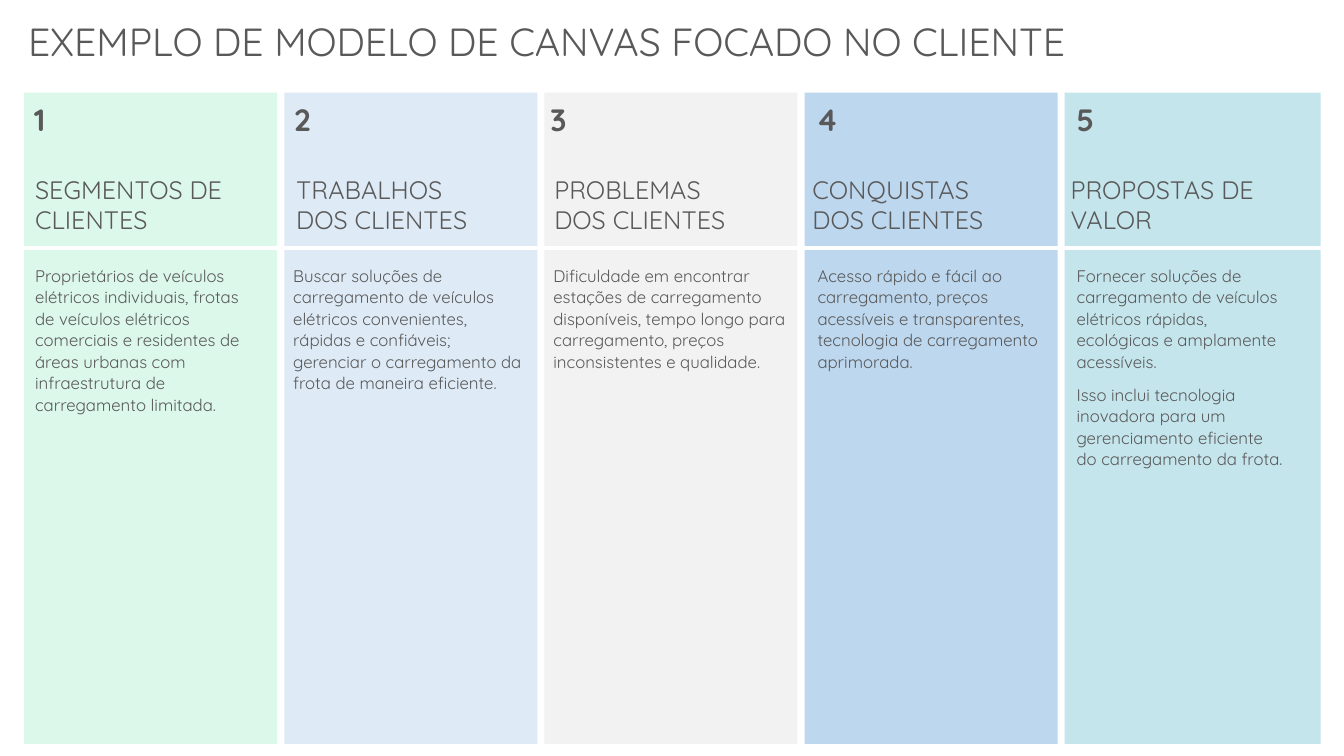
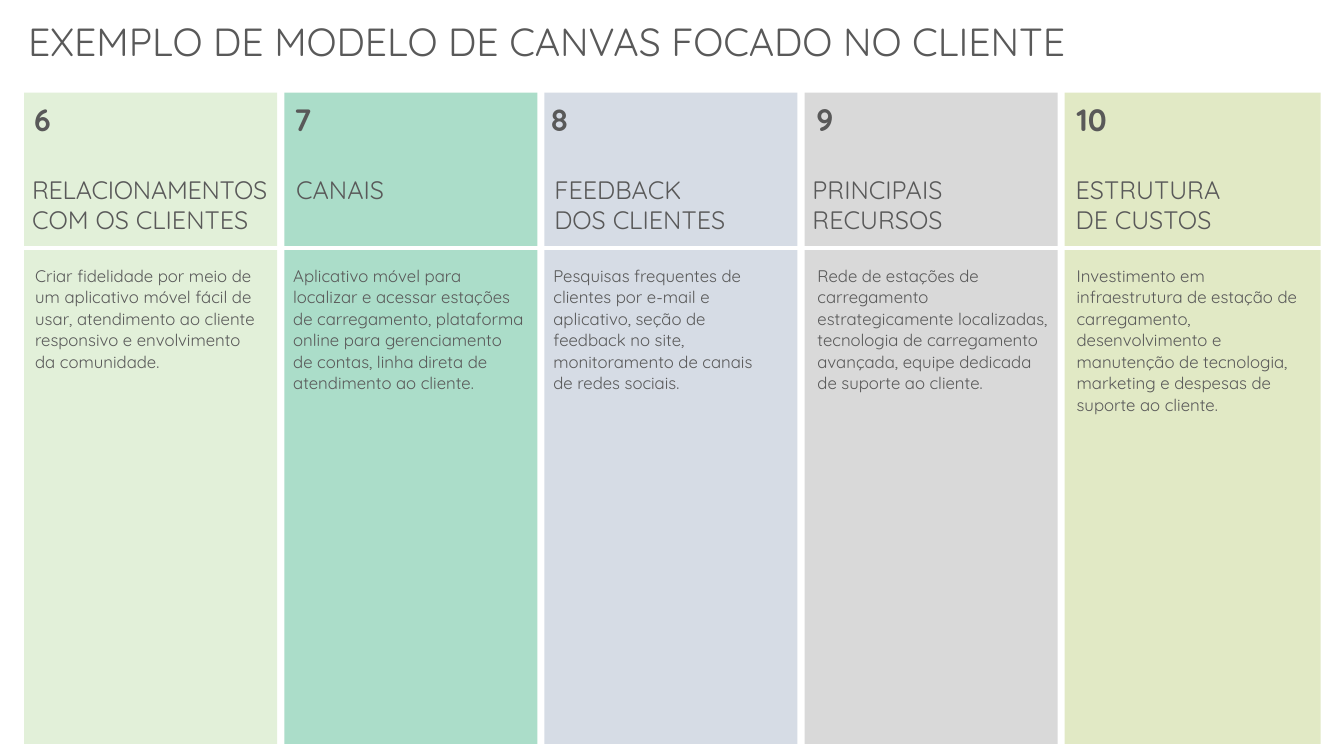
import dataclasses

import lxml.etree
import pptx
import pptx.dml.color
import pptx.enum.shapes
import pptx.enum.text
import pptx.oxml.ns
import pptx.util

PX = 9144


@dataclasses.dataclass(frozen=True)
class Theme:
    font: str = "Quicksand"
    ink: str = "595959"
    divider: str = "FFFFFF"
    title_size: int = 28
    number_size: int = 22
    heading_size: int = 18
    body_size: int = 12
    columns: tuple = (
        ("DCF8EB", "DEEBF7", "F2F2F2", "BDD7EE", "C5E5ED"),
        ("E2F0D9", "ABDDC9", "D6DCE5", "D9D9D9", "E1E9C5"),
    )


@dataclasses.dataclass(frozen=True)
class Card:
    heading: str
    body: tuple
    body_width: int = 250
    heading_shift: int = 0
    heading_width: int = 250
    tightened: str = ""


THEME = Theme()
TITLE = "EXEMPLO DE MODELO DE CANVAS FOCADO NO CLIENTE"
COLUMN_LEFT, COLUMN_PITCH, COLUMN_TOP, COLUMN_HEIGHT = 24, 258, 92, 646
COLUMN_WIDTHS = (251, 251, 251, 251, 254)
NUMBER_LEFTS = (24, 282, 536, 800, 1058)
HEADING_LEFTS = (25, 284, 540, 796, 1052)
BODY_LEFTS = (25, 281, 539, 801, 1058)

PAGES = (
    (
        Card("SEGMENTOS DE CLIENTES",
             ("Proprietários de veículos elétricos individuais, frotas de veículos elétricos "
              "comerciais e residentes de áreas urbanas com infraestrutura de carregamento "
              "limitada.",), 229),
        Card("TRABALHOS\vDOS CLIENTES",
             ("Buscar soluções de carregamento de veículos elétricos convenientes, rápidas e "
              "confiáveis; gerenciar o carregamento da frota de maneira eficiente.",)),
        Card("PROBLEMAS\vDOS CLIENTES",
             ("Dificuldade em encontrar estações de carregamento disponíveis, tempo longo para "
              "carregamento, preços inconsistentes e qualidade.",), 251),
        Card("CONQUISTAS\vDOS CLIENTES",
             ("Acesso rápido e fácil ao carregamento, preços acessíveis e transparentes, "
              "tecnologia de carregamento aprimorada.",), 245),
        Card("PROPOSTAS DE VALOR",
             ("Fornecer soluções de carregamento de veículos elétricos rápidas, ecológicas e "
              "amplamente acessíveis.",
              "Isso inclui tecnologia inovadora para um gerenciamento eficiente do "
              "carregamento da frota."), 225),
    ),
    (
        Card(" COM OS CLIENTES",
             ("Criar fidelidade por meio de um aplicativo móvel fácil de usar, atendimento ao "
              "cliente responsivo e envolvimento da comunidade.",),
             238, -3, 286, "RELACIONAMENTOS"),
        Card("CANAIS",
             ("Aplicativo móvel para localizar e acessar estações de carregamento, plataforma "
              "online para gerenciamento de contas, linha direta de atendimento ao cliente.",)),
        Card("FEEDBACK\vDOS CLIENTES",
             ("Pesquisas frequentes de clientes por e-mail e aplicativo, seção de feedback no "
              "site, monitoramento de canais de redes sociais.",), 235),
        Card("PRINCIPAIS\vRECURSOS",
             ("Rede de estações de carregamento estrategicamente localizadas, tecnologia de "
              "carregamento avançada, equipe dedicada de suporte ao cliente.",)),
        Card("ESTRUTURA\vDE CUSTOS",
             ("Investimento em infraestrutura de estação de carregamento, desenvolvimento e "
              "manutenção de tecnologia, marketing e despesas de suporte ao cliente.",),
             250, 5, 245),
    ),
)


def add_span(para, text, size, bold=False):
    for index, line in enumerate(text.split("\v")):
        if index:
            para.add_line_break()
        span = para.add_run()
        span.text = line
        span.font.name = THEME.font
        span.font.size = pptx.util.Pt(size)
        span.font.bold = bold
        span.font.color.rgb = pptx.dml.color.RGBColor.from_string(THEME.ink)


def add_text(page, area, texts, size, bold=False, spaced=True):
    box = page.shapes.add_textbox(*(value * PX for value in area))
    box.text_frame.word_wrap = True
    for index, text in enumerate(texts):
        para = box.text_frame.add_paragraph() if index else box.text_frame.paragraphs[0]
        if spaced:
            para.line_spacing = 1.07
            para.space_after = pptx.util.Pt(8)
        if text:
            add_span(para, text, size, bold)
    return box


deck = pptx.Presentation()
deck.slide_width = 1333 * PX
deck.slide_height = 750 * PX
layout = deck.slide_layouts[5]
number = 0

for cards, colors in zip(PAGES, THEME.columns):
    page = deck.slides.add_slide(layout)
    title = page.shapes.title
    title.left, title.top, title.width, title.height = (
        value * PX for value in (18, 12, 1295, 57))
    title.text_frame.word_wrap = True
    title.text_frame.auto_size = pptx.enum.text.MSO_AUTO_SIZE.NONE
    title.text_frame.vertical_anchor = pptx.enum.text.MSO_ANCHOR.TOP
    title_para = title.text_frame.paragraphs[0]
    title_para.alignment = pptx.enum.text.PP_ALIGN.LEFT
    add_span(title_para, TITLE, THEME.title_size)

    for index, color in enumerate(colors):
        column = page.shapes.add_shape(
            pptx.enum.shapes.MSO_SHAPE.RECTANGLE,
            (COLUMN_LEFT + index * COLUMN_PITCH) * PX, COLUMN_TOP * PX,
            COLUMN_WIDTHS[index] * PX, COLUMN_HEIGHT * PX)
        column.shadow.inherit = False
        column.fill.solid()
        column.fill.fore_color.rgb = pptx.dml.color.RGBColor.from_string(color)
        column.line.fill.background()

    divider = page.shapes.add_connector(
        pptx.enum.shapes.MSO_CONNECTOR.STRAIGHT,
        COLUMN_LEFT * PX, 246 * PX, 1320 * PX, 246 * PX)
    divider.line.color.rgb = pptx.dml.color.RGBColor.from_string(THEME.divider)
    divider.line.width = pptx.util.Pt(2.25)
    lxml.etree.SubElement(divider._element.spPr, pptx.oxml.ns.qn("a:effectLst"))

    for index, card in enumerate(cards):
        number += 1
        number_width = 60 if number > 9 else 46
        add_text(page, (NUMBER_LEFTS[index], 92, number_width, 64),
                 (str(number),), THEME.number_size, bold=True)
        heading = add_text(
            page, (HEADING_LEFTS[index] + card.heading_shift, 168, card.heading_width, 71),
            (card.tightened,), THEME.heading_size, spaced=False)
        heading_para = heading.text_frame.paragraphs[0]
        for span in heading_para.runs:
            span.font._element.set("spc", "-20")
        add_span(heading_para, card.heading, THEME.heading_size)
        add_text(page, (BODY_LEFTS[index], 257, card.body_width, 157),
                 card.body, THEME.body_size)

deck.save("out.pptx")
